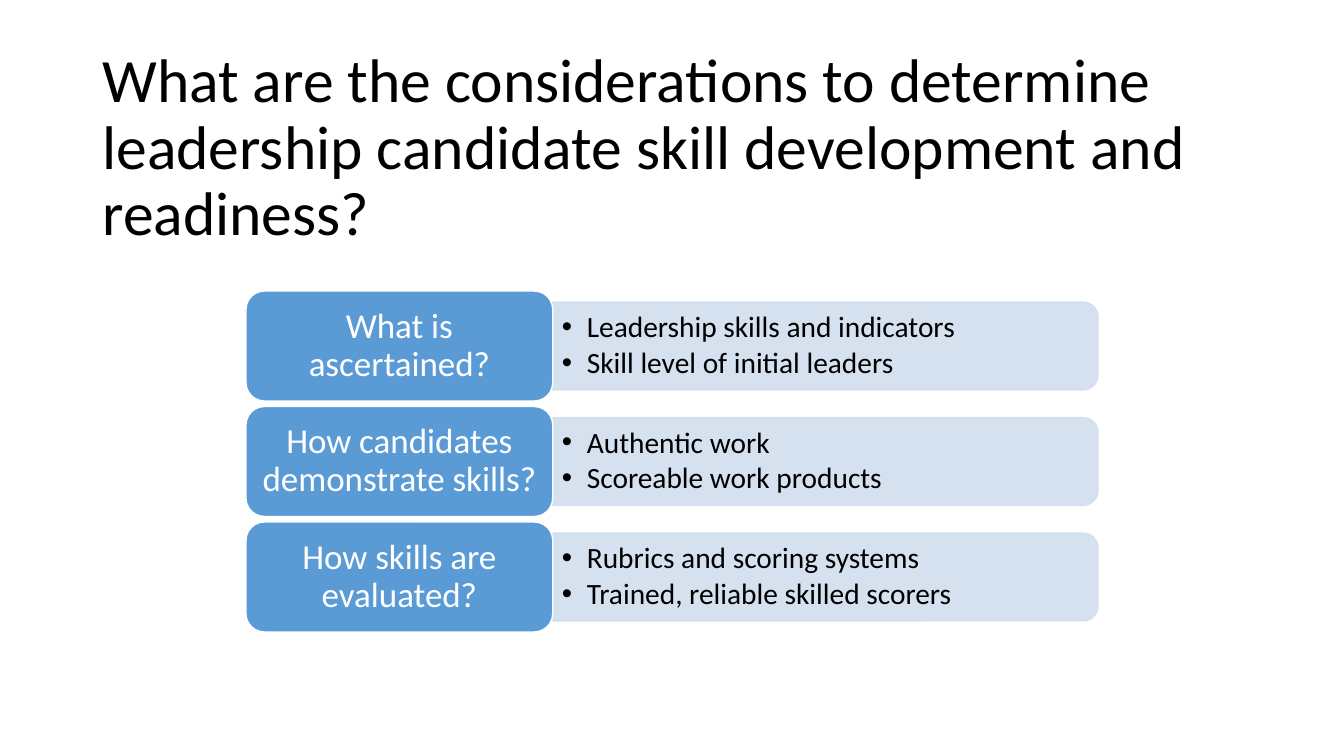
from dataclasses import dataclass

from lxml.etree import SubElement
from pptx import Presentation
from pptx.dml.color import RGBColor
from pptx.enum.shapes import MSO_SHAPE
from pptx.enum.text import MSO_ANCHOR, MSO_AUTO_SIZE, PP_ALIGN
from pptx.oxml.ns import qn
from pptx.util import Cm, Pt


@dataclass(frozen=True)
class Theme:
    font: str = "Calibri"
    ink: RGBColor = RGBColor(0x00, 0x00, 0x00)
    white: RGBColor = RGBColor(0xFF, 0xFF, 0xFF)
    label_fill: RGBColor = RGBColor(0x5B, 0x9B, 0xD5)
    panel_fill: RGBColor = RGBColor(0xD2, 0xDE, 0xEF)
    panel_opacity: int = 90
    title_size: Pt = Pt(44)
    label_size: Pt = Pt(25)
    list_size: Pt = Pt(21)


THEME = Theme()

TITLE = ("What are the considerations to determine leadership candidate "
         "skill development and readiness?")
CONSIDERATIONS = [
    ("What is ascertained?",
     ["Leadership skills and indicators", "Skill level of initial leaders"]),
    ("How candidates demonstrate skills?",
     ["Authentic work", "Scoreable work products"]),
    ("How skills are evaluated?",
     ["Rubrics and scoring systems", "Trained, reliable skilled scorers"]),
]

LABEL_LEFT, LABEL_WIDTH, LABEL_HEIGHT = Cm(6.2), Cm(7.73), Cm(2.77)
PANEL_LEFT, PANEL_WIDTH, PANEL_HEIGHT = Cm(13.93), Cm(13.74), Cm(2.21)
FIRST_CENTRE, ROW_PITCH = Cm(8.72), Cm(2.91)


def style_paragraph(para, size, color, align=PP_ALIGN.LEFT):
    para.font.name = THEME.font
    para.font.size = size
    para.font.color.rgb = color
    para.alignment = align
    para.line_spacing = 0.9


def set_frame(frame, side, vertical):
    """Wrap and centre the text vertically, with the given insets."""
    frame.word_wrap = True
    frame.auto_size = MSO_AUTO_SIZE.NONE
    frame.vertical_anchor = MSO_ANCHOR.MIDDLE
    frame.margin_left = frame.margin_right = side
    frame.margin_top = frame.margin_bottom = vertical


def add_bullet(para):
    properties = para._p.get_or_add_pPr()
    properties.set("marL", str(Cm(0.63)))
    properties.set("indent", str(-Cm(0.63)))
    SubElement(properties, qn("a:buFont"), typeface="Arial")
    SubElement(properties, qn("a:buChar"), char="•")


def set_opacity(color_format_parent, percent):
    for color in color_format_parent.iter(qn("a:srgbClr")):
        SubElement(color, qn("a:alpha"), val=str(percent * 1000))


def add_filled_shape(page, kind, left, top, width, height, fill, line):
    shape = page.shapes.add_shape(kind, left, top, width, height)
    shape.shadow.inherit = False
    shape.fill.solid()
    shape.fill.fore_color.rgb = fill
    shape.line.color.rgb = line
    shape.line.width = Pt(1)
    return shape


def add_title(page):
    title = page.shapes.title
    title.left, title.top = Cm(2.33), Cm(1.01)
    title.width, title.height = Cm(29.21), Cm(5.51)
    set_frame(title.text_frame, Cm(0.25), Cm(0.13))
    title.text_frame.text = TITLE
    style_paragraph(title.text_frame.paragraphs[0], THEME.title_size, THEME.ink)


def add_panel(page, centre):
    """Add a bar rounded at its right end: a top-rounded shape turned by 90°."""
    panel = add_filled_shape(
        page, MSO_SHAPE.ROUND_2_SAME_RECTANGLE,
        PANEL_LEFT + (PANEL_WIDTH - PANEL_HEIGHT) // 2, centre - PANEL_WIDTH // 2,
        PANEL_HEIGHT, PANEL_WIDTH, THEME.panel_fill, THEME.panel_fill)
    panel.rotation = 90
    set_opacity(panel._element.spPr, THEME.panel_opacity)


def add_bullet_list(page, centre, items):
    height = Cm(2)
    box = page.shapes.add_textbox(PANEL_LEFT, centre - height // 2, Cm(13.64), height)
    frame = box.text_frame
    set_frame(frame, Cm(0.23), Cm(0.11))
    frame.text = "\n".join(items)
    for para in frame.paragraphs:
        style_paragraph(para, THEME.list_size, THEME.ink)
        para.space_after = Pt(3)
        add_bullet(para)


def add_label(page, centre, text):
    label = add_filled_shape(
        page, MSO_SHAPE.ROUNDED_RECTANGLE, LABEL_LEFT, centre - LABEL_HEIGHT // 2,
        LABEL_WIDTH, LABEL_HEIGHT, THEME.label_fill, THEME.white)
    set_frame(label.text_frame, Cm(0.15), Cm(0.13))
    label.text_frame.text = text
    style_paragraph(label.text_frame.paragraphs[0], THEME.label_size,
                    THEME.white, PP_ALIGN.CENTER)


def main():
    deck = Presentation()
    deck.slide_width, deck.slide_height = Cm(33.87), Cm(19.05)
    title_only = deck.slide_layouts.get_by_name("Title Only")
    page = deck.slides.add_slide(title_only)
    add_title(page)
    for row, (question, answers) in enumerate(CONSIDERATIONS):
        centre = FIRST_CENTRE + row * ROW_PITCH
        add_panel(page, centre)
        add_bullet_list(page, centre, answers)
        add_label(page, centre, question)
    deck.save("out.pptx")


if __name__ == "__main__":
    main()
